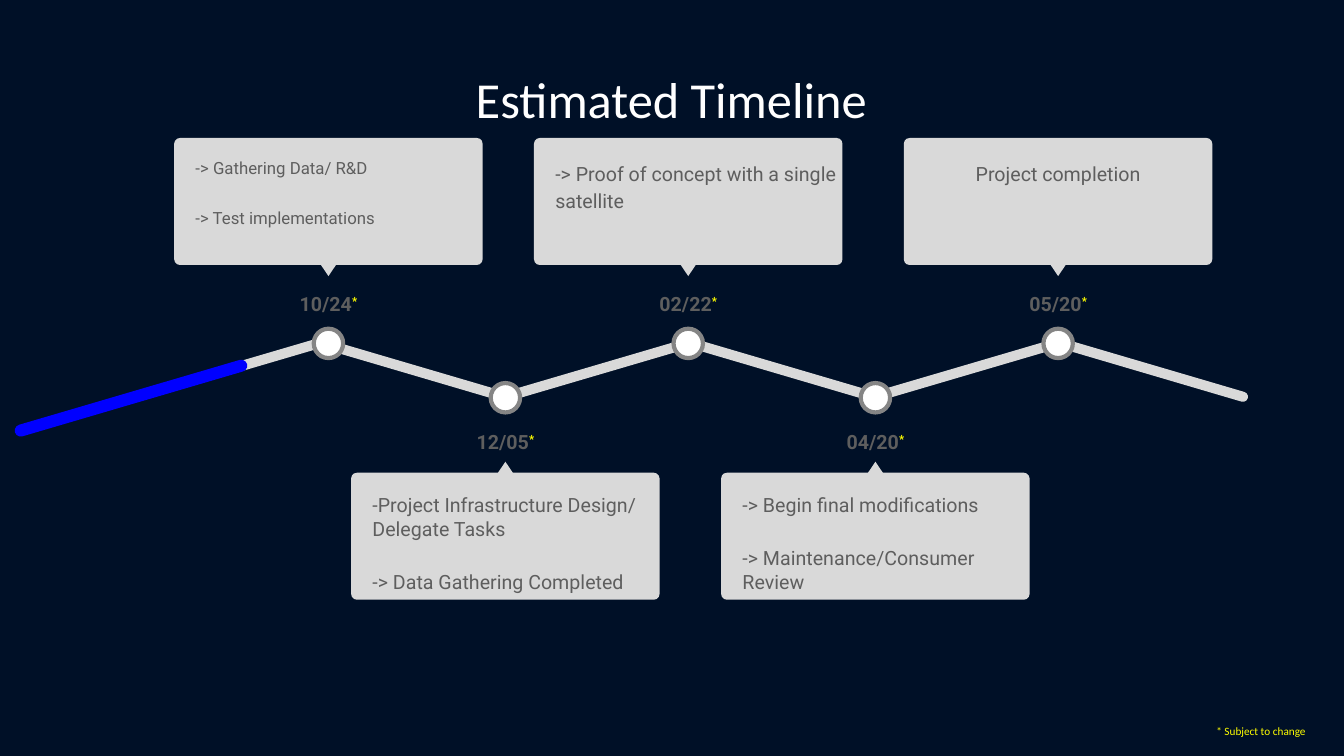
from dataclasses import dataclass

from pptx import Presentation
from pptx.dml.color import RGBColor
from pptx.enum.shapes import MSO_SHAPE
from pptx.enum.text import MSO_ANCHOR, MSO_AUTO_SIZE, PP_ALIGN
from pptx.util import Pt

ROUNDED = MSO_SHAPE.ROUNDED_RECTANGLE
ELLIPSE = MSO_SHAPE.OVAL
TRIANGLE = MSO_SHAPE.ISOSCELES_TRIANGLE
BOTTOM = MSO_ANCHOR.BOTTOM
NO_AUTOSIZE = MSO_AUTO_SIZE.NONE
CENTER = PP_ALIGN.CENTER
LEFT = PP_ALIGN.LEFT


@dataclass(frozen=True)
class Theme:
    """Colours, fonts and type sizes of the slide."""
    background: RGBColor = RGBColor.from_string("001027")
    panel: RGBColor = RGBColor.from_string("D9D9D9")
    ring: RGBColor = RGBColor.from_string("858585")
    white: RGBColor = RGBColor.from_string("FFFFFF")
    text: RGBColor = RGBColor.from_string("5E5E5E")
    note: RGBColor = RGBColor.from_string("FFFF00")
    progress: RGBColor = RGBColor.from_string("0000FF")
    heading_font: str = "Calibri"
    body_font: str = "Roboto"
    title_size: float = 36
    body_size: float = 14
    small_size: float = 12
    note_size: float = 8


@dataclass(frozen=True)
class Milestone:
    """One dated step of the timeline."""
    center: float
    date: str
    lines: tuple
    above: bool
    size: float = Theme.body_size
    line_spacing: float = 1.0
    alignment: PP_ALIGN = LEFT
    text_width: float = 208.8


THEME = Theme()
CARD_WIDTH, CARD_HEIGHT = 220.3, 90.7
DOT_SIZE = 21
SLOPE = 16.4
MILESTONES = (
    Milestone(625.3, "04/20", ("-> Begin final modifications",
                               "-> Maintenance/Consumer Review"), False),
    Milestone(755.8, "05/20", ("Project completion",), True,
              line_spacing=1.15, alignment=CENTER),
    Milestone(491.6, "02/22", ("-> Proof of concept with a single satellite",), True,
              line_spacing=1.15, text_width=220.3),
    Milestone(361, "12/05", ("-Project Infrastructure Design/ Delegate Tasks",
                             "-> Data Gathering Completed"), False),
    Milestone(234.6, "10/24", ("-> Gathering Data/ R&D",
                               "-> Test implementations"), True, size=THEME.small_size),
)


def add_filled_shape(shapes, kind, left, top, width, height, color, rotation=0):
    """Add a flat preset shape without outline."""
    shape = shapes.add_shape(kind, Pt(left), Pt(top), Pt(width), Pt(height))
    shape.shadow.inherit = False
    shape.fill.solid()
    shape.fill.fore_color.rgb = color
    shape.line.fill.background()
    shape.rotation = rotation
    return shape


def add_text(shapes, left, top, width, height, lines, inset):
    """Add a wrapping text box and return its text frame."""
    frame = shapes.add_textbox(Pt(left), Pt(top), Pt(width), Pt(height)).text_frame
    frame.word_wrap = True
    frame.auto_size = NO_AUTOSIZE
    frame.margin_left = frame.margin_right = Pt(inset)
    frame.margin_top = frame.margin_bottom = Pt(inset)
    frame.text = "\n".join(lines)
    return frame


def style_font(font, name, size, color, bold=False):
    """Set the face, size, colour and weight of a font."""
    font.name = name
    font.size = Pt(size)
    font.color.rgb = color
    font.bold = bold


def add_bar(slide, left, top, width, height, color, rotation):
    """Add a sloped bar with round ends."""
    bar = add_filled_shape(slide.shapes, ROUNDED, left, top, width, height, color, rotation)
    bar.adjustments[0] = 0.5


def add_path(slide, left, top, step, count):
    """Add the zigzag of evenly spaced bars."""
    for index in range(count):
        rotation = SLOPE if index % 2 else -SLOPE
        add_bar(slide, left + index * step, top, 143.3, 7.2, THEME.panel, rotation)


def add_date(shapes, left, top, width, height, date):
    """Add a centred date with a raised asterisk."""
    paragraph = add_text(shapes, left, top, width, height, [date], 9.4).paragraphs[0]
    paragraph.alignment = CENTER
    paragraph.line_spacing = 1.15
    style_font(paragraph.runs[0].font, THEME.body_font, THEME.body_size, THEME.text, True)
    star = paragraph.add_run()
    star.text = "*"
    style_font(star.font, THEME.body_font, THEME.body_size, THEME.note, True)
    star._r.get_or_add_rPr().set("baseline", "30000")


def add_card(shapes, left, top, milestone):
    """Add the panel and its text."""
    panel = add_filled_shape(shapes, ROUNDED, left, top, CARD_WIDTH, CARD_HEIGHT, THEME.panel)
    panel.adjustments[0] = 0.045
    frame = add_text(shapes, left + 5.8, top + 5, milestone.text_width, 80,
                     milestone.lines, 9.4)
    for index, paragraph in enumerate(frame.paragraphs):
        paragraph.alignment = milestone.alignment
        paragraph.line_spacing = milestone.line_spacing
        if index:
            paragraph.space_before = Pt(21)
        for run in paragraph.runs:
            style_font(run.font, THEME.body_font, milestone.size, THEME.text)


def add_milestone(slide, top, milestone):
    """Add a dot, date, pointer and card stacked from the given top."""
    shapes = slide.shapes.add_group_shape().shapes
    center = milestone.center
    if milestone.above:
        card, pointer, date, dot = 0, 90, 98, 136.2
    else:
        dot, date, pointer, card = 0, 21.6, 56.2, 64.1
    circle = add_filled_shape(shapes, ELLIPSE, center - DOT_SIZE / 2, top + dot,
                              DOT_SIZE, DOT_SIZE, THEME.white)
    circle.line.color.rgb = THEME.ring
    circle.line.width = Pt(3)
    add_date(shapes, center - 44.6, top + date, 89.3, 35.3, milestone.date)
    add_card(shapes, center - CARD_WIDTH / 2, top + card, milestone)
    add_filled_shape(shapes, TRIANGLE, center - 5.8, top + pointer, 11.6, 8.6,
                     THEME.panel, 180 if milestone.above else 0)


def add_title(slide, left, top, width, height):
    """Place and format the title placeholder."""
    title = slide.shapes.title
    title.left, title.top, title.width, title.height = Pt(left), Pt(top), Pt(width), Pt(height)
    frame = title.text_frame
    frame.text = "Estimated Timeline"
    frame.auto_size = NO_AUTOSIZE
    frame.vertical_anchor = BOTTOM
    paragraph = frame.paragraphs[0]
    paragraph.alignment = CENTER
    paragraph.line_spacing = 0.9
    style_font(paragraph.runs[0].font, THEME.heading_font, THEME.title_size, THEME.white)


def add_footnote(slide, left, top, width, height):
    """Add the note that explains the asterisks."""
    frame = add_text(slide.shapes, left, top, width, height, ["* Subject to change"], 7.2)
    style_font(frame.paragraphs[0].runs[0].font, THEME.heading_font,
               THEME.note_size, THEME.note)


def main():
    """Build and save the timeline slide."""
    presentation = Presentation()
    presentation.slide_width, presentation.slide_height = Pt(960), Pt(540)
    slide = presentation.slides.add_slide(presentation.slide_layouts[5])
    slide.background.fill.solid()
    slide.background.fill.fore_color.rgb = THEME.background
    add_title(slide, 119.5, -12.2, 720, 108)
    add_path(slide, 91.4, 260.6, 131.9, 6)
    for milestone in MILESTONES:
        add_milestone(slide, 98.6 if milestone.above else 273.6, milestone)
    add_bar(slide, 7.2, 280.1, 172.8, 8.6, THEME.progress, -SLOPE)
    add_footnote(slide, 861.8, 510.5, 98.2, 29.5)
    presentation.save("out.pptx")


if __name__ == "__main__":
    main()
